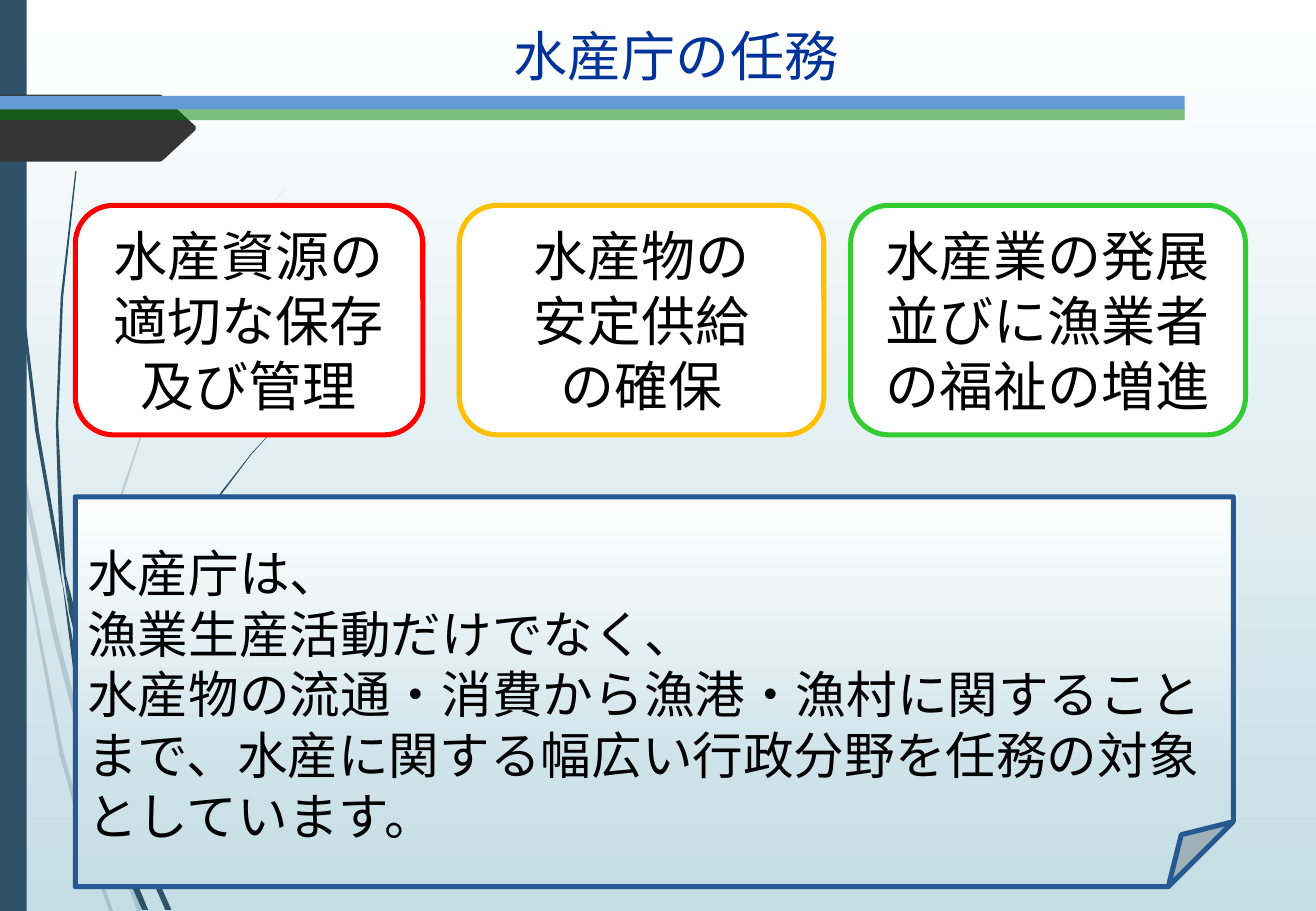
"""Builds the slide on the duties of the fisheries agency."""
from lxml.etree import SubElement
from pptx import Presentation
from pptx.dml.color import RGBColor
from pptx.enum.shapes import MSO_SHAPE as Preset
from pptx.enum.text import MSO_ANCHOR as Anchor, PP_ALIGN as Align
from pptx.oxml.ns import qn
from pptx.util import Inches, Pt

COLORS = {
    "navy": "2E5369", "tag": "353535", "title": "003399", "green": "008000",
    "blue": "649AD6", "white": "FFFFFF", "black": "000000", "red": "FF0000",
    "amber": "FFC000", "lime": "33CC33", "edge": "265991", "mist": "CEE3E9",
    "sea": "C5DEE5",
}
BODY_FONT = "TeX Gyre Adventor"

PALE_WISPS = [
    [(0.08, 3.5), (0.06, 3.22), (0, 2.82), (0, 2.99), (0.08, 3.44)],
    [(0.43, 5.22), (0.63, 5.99), (0.64, 5.86), (0.47, 5.2), (0.11, 3.45), (0.13, 3.76)],
    [(0.69, 6.07), (0.66, 5.96), (0.66, 6.1), (0.92, 6.94), (1.13, 7.5), (1.17, 7.5), (0.96, 6.92)],
    [(0.7, 6.83), (0.52, 6.19), (0.23, 4.69), (0.13, 3.76), (0.08, 3.5), (0.21, 4.7),
     (0.49, 6.21), (0.69, 6.93), (0.9, 7.5), (0.93, 7.5)],
    [(0.66, 5.84), (0.83, 4.62), (1.2, 3.49), (1.72, 2.45), (2.02, 1.98), (2.35, 1.54),
     (2.02, 1.97), (1.71, 2.44), (1.19, 3.48), (0.81, 4.61), (0.64, 5.84), (0.66, 5.96)],
]
DARK_WISPS = [
    [(0.06, 1.1), (0.15, 2.33), (0.29, 3.55), (0.51, 4.81), (0.49, 4.53), (0.32, 3.55),
     (0.17, 2.32), (0.07, 1.09), (0.03, 0), (0.02, 0)],
    [(0.79, 5.92), (0.95, 6.45), (0.95, 6.31), (0.83, 5.9), (0.54, 4.72), (0.57, 5.05)],
    [(1.01, 6.49), (0.99, 6.41), (0.99, 6.56), (1.18, 7.08), (1.36, 7.49), (1.41, 7.49), (1.22, 7.06)],
    [(0.98, 6.91), (0.88, 6.57), (0.65, 5.56), (0.51, 4.77), (0.61, 5.57), (0.83, 6.59),
     (0.99, 7.08), (1.17, 7.49), (1.22, 7.49)],
    [(0.54, 4.72), (0.48, 3.49), (0.52, 2.45), (0.63, 1.41), (0.62, 1.41), (0.5, 2.45),
     (0.46, 3.49), (0.49, 4.49), (0.57, 5.05)],
    [(0.99, 6.33), (1.12, 5.52), (1.42, 4.76), (1.83, 4.06), (2.07, 3.74), (2.34, 3.44),
     (2.07, 3.73), (1.82, 4.05), (1.4, 4.74), (1.09, 5.51), (0.95, 6.31), (0.99, 6.41)],
]
TAG_OUTLINE = [(0, 0.78), (1.32, 0.78), (1.34, 0.79), (1.61, 1.04),
               (1.61, 1.07), (1.34, 1.32), (1.32, 1.33), (0, 1.33)]
DUTIES = [
    (0.62, 2.86, "red", ["水産資源の適切な保存及び管理"]),
    (3.78, 3, "amber", ["水産物の", "安定供給", "の確保"]),
    (7, 3.25, "lime", ["水産業の発展並びに漁業者の福祉の増進"]),
]
SUMMARY = [
    "水産庁は、",
    "漁業生産活動だけでなく、",
    "水産物の流通・消費から漁港・漁村に関することまで、水産に関する幅広い行政分野を任務の対象",
    "としています。",
]


def rgb(name):
    return RGBColor.from_string(COLORS[name])


def style(shape, color, opacity=100, line=None):
    shape.shadow.inherit = False
    shape.fill.solid()
    shape.fill.fore_color.rgb = rgb(color)
    if opacity < 100:
        tint = shape._element.spPr.find(".//" + qn("a:srgbClr"))
        SubElement(tint, qn("a:alpha"), val=str(opacity * 1000))
    if line:
        shape.line.color.rgb = rgb(line)
        shape.line.width = Pt(3)
    else:
        shape.line.fill.background()


def set_gradient(fill, element, stops):
    fill.gradient()
    fill.gradient_angle = 270
    stop_list = element.find(".//" + qn("a:gsLst"))
    stop_list.clear()
    for position, color in stops:
        stop = SubElement(stop_list, qn("a:gs"), pos=str(position * 1000))
        SubElement(stop, qn("a:srgbClr"), val=COLORS[color])


def add_outline(slide, points, color, opacity=100):
    points = [(Inches(x), Inches(y)) for x, y in points]
    builder = slide.shapes.build_freeform(*points[0], scale=1)
    builder.add_line_segments(points[1:], close=True)
    style(builder.convert_to_shape(), color, opacity)


def add_preset(slide, preset, box, color, opacity=100, line=None):
    shape = slide.shapes.add_shape(preset, *map(Inches, box))
    style(shape, color, opacity, line)
    return shape


def write(shape, lines, size, color="black", font=BODY_FONT, align=Align.CENTER, anchor=Anchor.MIDDLE):
    frame = shape.text_frame
    frame.word_wrap = True
    frame.vertical_anchor = anchor
    for index, line in enumerate(lines):
        paragraph = frame.add_paragraph() if index else frame.paragraphs[0]
        paragraph.alignment = align
        run = paragraph.add_run()
        run.text = line
        run.font.size = Pt(size)
        run.font.name = font
        run.font.color.rgb = rgb(color)


def main():
    presentation = Presentation()
    presentation.slide_width, presentation.slide_height = Inches(10.83), Inches(7.5)
    slide = presentation.slides.add_slide(presentation.slide_layouts[6])
    set_gradient(slide.background.fill, slide._element, [(0, "white"), (100, "sea")])
    for wisps, opacity in ((PALE_WISPS, 20), (DARK_WISPS, 100)):
        for wisp in wisps:
            add_outline(slide, wisp, "navy", opacity)
    add_preset(slide, Preset.RECTANGLE, (0, 0, 0.22, 7.5), "navy")
    add_outline(slide, TAG_OUTLINE, "tag")
    title = slide.shapes.add_textbox(*map(Inches, (0.3, 0.13, 10.53, 0.64)))
    write(title, ["水産庁の任務"], 32, "title", "Arial")
    add_preset(slide, Preset.RECTANGLE, (0, 0.87, 9.75, 0.12), "green", 50)
    add_preset(slide, Preset.RECTANGLE, (0, 0.79, 9.75, 0.11), "blue")
    for left, width, line, duty in DUTIES:
        card = add_preset(slide, Preset.ROUNDED_RECTANGLE, (left, 1.69, width, 1.89), "white", line=line)
        write(card, duty, 32)
    note = add_preset(slide, Preset.FOLDED_CORNER, (0.62, 4.09, 9.53, 3.21), "white", line="edge")
    set_gradient(note.fill, note._element.spPr, [(0, "white"), (70, "mist"), (100, "sea")])
    note.text_frame.margin_top = Inches(0.37)
    write(note, SUMMARY, 30, align=Align.LEFT, anchor=Anchor.TOP)
    presentation.save("out.pptx")


if __name__ == "__main__":
    main()
